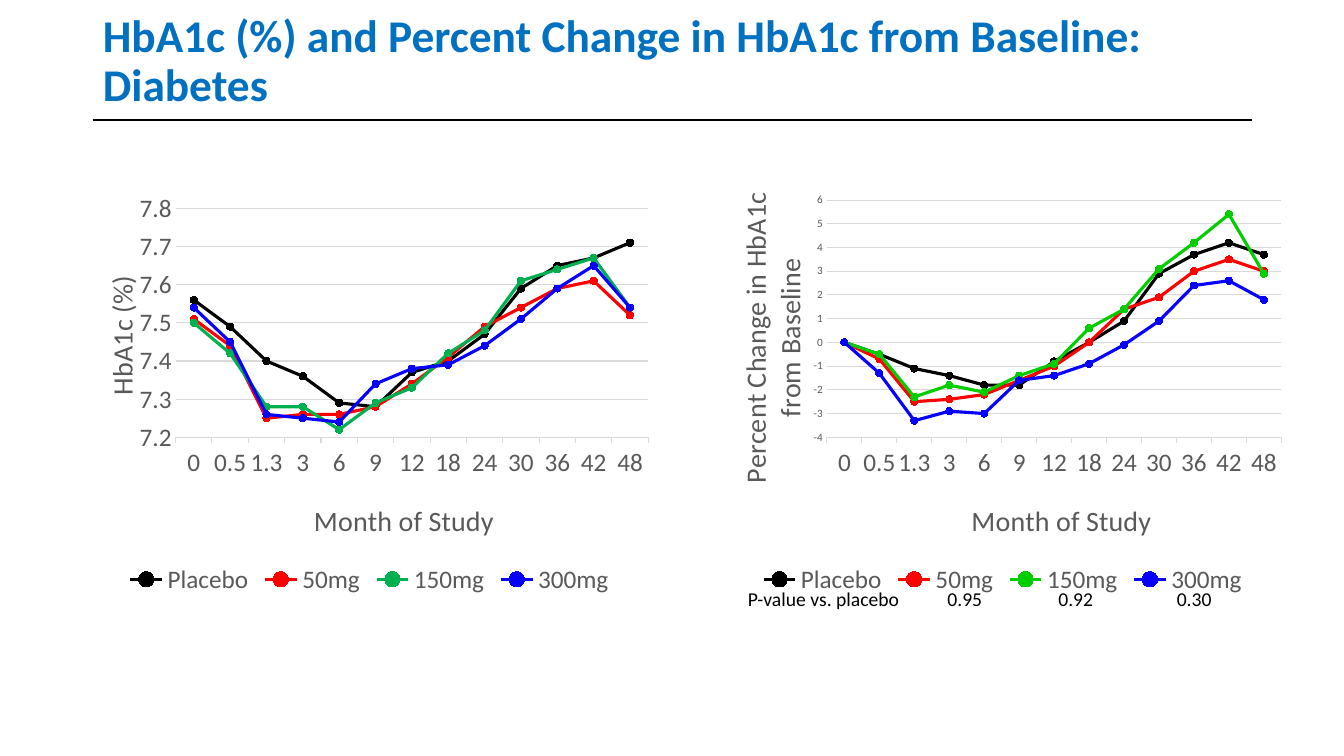
from pptx import Presentation
from pptx.chart.data import CategoryChartData
from pptx.dml.color import RGBColor
from pptx.enum.chart import (XL_AXIS_CROSSES, XL_CHART_TYPE, XL_LEGEND_POSITION,
                             XL_MARKER_STYLE, XL_TICK_LABEL_POSITION, XL_TICK_MARK)
from pptx.enum.shapes import MSO_CONNECTOR
from pptx.enum.text import MSO_ANCHOR, PP_ALIGN
from pptx.oxml import parse_xml
from pptx.oxml.ns import nsdecls, qn
from pptx.util import Inches, Pt

# Content
TITLE = "HbA1c (%) and Percent Change in HbA1c from Baseline: Diabetes"
FONT, GREY, GRID = "Calibri", "595959", "D9D9D9"
MONTHS = ["0", "0.5", "1.3", "3", "6", "9", "12", "18", "24", "30", "36", "42", "48"]
DOSES = ["Placebo", "50mg", "150mg", "300mg"]
CHARTS = [
    dict(left=0.66, label="HbA1c (%)", number_format="#,##0.0", tick_size=18,
         scale=(7.2, 7.8, 0.1), colors=["000000", "FF0000", "00B050", "0700FF"],
         plot=(0.18, 0.06, 0.78, 0.55), month_at=(0.4, 0.75), label_at=(0.05, 0.21),
         values=[
             [7.56, 7.49, 7.4, 7.36, 7.29, 7.28, 7.37, 7.4, 7.47, 7.59, 7.65, 7.67, 7.71],
             [7.51, 7.44, 7.25, 7.26, 7.26, 7.28, 7.34, 7.41, 7.49, 7.54, 7.59, 7.61, 7.52],
             [7.5, 7.42, 7.28, 7.28, 7.22, 7.29, 7.33, 7.42, 7.48, 7.61, 7.64, 7.67, 7.54],
             [7.54, 7.45, 7.26, 7.25, 7.24, 7.34, 7.38, 7.39, 7.44, 7.51, 7.59, 7.65, 7.54]]),
    dict(left=6.94, label="Percent Change in HbA1c from Baseline", number_format="#,##0",
         tick_size=8, scale=(-4, 6, 1), colors=["000000", "FF0100", "02CD00", "0700FF"],
         plot=(0.21, 0.04, 0.75, 0.57), month_at=(0.44, 0.75), label_at=(0.05, 0.01),
         values=[
             [0, -0.5, -1.1, -1.4, -1.8, -1.8, -0.8, 0, 0.9, 2.9, 3.7, 4.2, 3.7],
             [0, -0.7, -2.5, -2.4, -2.2, -1.6, -1, 0, 1.4, 1.9, 3, 3.5, 3],
             [0, -0.5, -2.3, -1.8, -2.1, -1.4, -0.9, 0.6, 1.4, 3.1, 4.2, 5.4, 2.9],
             [0, -1.3, -3.3, -2.9, -3, -1.6, -1.4, -0.9, -0.1, 0.9, 2.4, 2.6, 1.8]]),
]
P_VALUES = ["", "P-value vs. placebo", "0.95", "0.92", "0.30", ""]
P_WIDTHS = [1.37, 2.24, 1.1, 1.1, 1.25, 1.83]
NO_GRID_STYLE = "{2D5ABB26-0587-4C30-8999-92F81FD0307C}"


def color(hex_string):
    return RGBColor.from_string(hex_string)


def format_font(font, size, hex_string, bold=False):
    font.name, font.size, font.bold = FONT, Pt(size), bold
    font.color.rgb = color(hex_string)


def write(frame, text, size=14, hex_string="000000", bold=False, align=None, spacing=None):
    para = frame.paragraphs[0]
    para.alignment, para.line_spacing = align, spacing
    span = para.add_run()
    span.text = text
    format_font(span.font, size, hex_string, bold)


def format_line(line, hex_string, width):
    line.color.rgb = color(hex_string)
    line.width = Pt(width)


def set_layout(parent, index, place, inner=False):
    """Place a chart part by fractions of the chart: x, y and, if given, w, h."""
    for old in parent.findall(qn("c:layout")):
        parent.remove(old)
    target = '<c:layoutTarget val="inner"/>' if inner else ""
    modes = '<c:xMode val="edge"/><c:yMode val="edge"/>'
    sizes = "".join(f'<c:{key} val="{value}"/>' for key, value in zip("xywh", place))
    parent.insert(index, parse_xml(
        f'<c:layout {nsdecls("c")}><c:manualLayout>{target}{modes}{sizes}'
        '</c:manualLayout></c:layout>'))


def format_axis(axis, title, place, tick_size, rotation=0):
    format_font(axis.tick_labels.font, tick_size, GREY)
    frame = axis.axis_title.text_frame
    write(frame, title, size=20, hex_string=GREY)
    frame._txBody.bodyPr.set("rot", str(rotation * 60000))
    set_layout(axis.axis_title._element, 1, place)
    axis.minor_tick_mark = XL_TICK_MARK.NONE


def add_line_chart(page, item):
    data = CategoryChartData()
    data.categories = MONTHS
    for dose, values in zip(DOSES, item["values"]):
        data.add_series(dose, values)
    chart = page.shapes.add_chart(
        XL_CHART_TYPE.LINE_MARKERS, Inches(item["left"]), Inches(1.82),
        Inches(6.01), Inches(4.13), data).chart
    chart.has_title = False
    format_font(chart.font, 10, "000000")

    # Axes
    months, levels = chart.category_axis, chart.value_axis
    format_axis(months, "Month of Study", item["month_at"], 18)
    months.major_tick_mark = XL_TICK_MARK.OUTSIDE
    months.tick_label_position = XL_TICK_LABEL_POSITION.LOW
    format_line(months.format.line, GRID, 0.75)
    format_axis(levels, item["label"], item["label_at"], item["tick_size"], rotation=-90)
    levels.major_tick_mark = XL_TICK_MARK.NONE
    levels.minimum_scale, levels.maximum_scale, levels.major_unit = item["scale"]
    levels.crosses = XL_AXIS_CROSSES.MINIMUM
    levels.tick_labels.number_format = item["number_format"]
    levels.tick_labels.number_format_is_linked = False
    levels.format.line.fill.background()
    levels.has_major_gridlines = True
    format_line(levels.major_gridlines.format.line, GRID, 0.75)

    # Legend and plot area
    chart.has_legend = True
    chart.legend.position = XL_LEGEND_POSITION.BOTTOM
    chart.legend.include_in_layout = False
    format_font(chart.legend.font, 18, GREY)
    set_layout(chart._chartSpace.chart.plotArea, 0, item["plot"], inner=True)

    # Series
    chart.plots[0].vary_by_categories = False
    for series, shade in zip(chart.plots[0].series, item["colors"]):
        series.smooth = False
        format_line(series.format.line, shade, 2.25)
        series.marker.style = XL_MARKER_STYLE.CIRCLE
        series.marker.size = 5
        series.marker.format.fill.solid()
        series.marker.format.fill.fore_color.rgb = color(shade)
        format_line(series.marker.format.line, shade, 0.75)


def add_p_values(page):
    table = page.shapes.add_table(1, len(P_VALUES), Inches(5.41), Inches(5.75),
                                  Inches(sum(P_WIDTHS)), Inches(0.41)).table
    table.first_row = table.horz_banding = False
    table._tbl.tblPr.find(qn("a:tableStyleId")).text = NO_GRID_STYLE
    for column, (text, width) in enumerate(zip(P_VALUES, P_WIDTHS)):
        table.columns[column].width = Inches(width)
        cell = table.cell(0, column)
        cell.fill.background()
        cell.vertical_anchor = MSO_ANCHOR.MIDDLE
        if text:
            write(cell.text_frame, text,
                  align=PP_ALIGN.RIGHT if column == 1 else PP_ALIGN.CENTER)


def main():
    deck = Presentation()
    deck.slide_width, deck.slide_height = Inches(13.33), Inches(7.5)
    page = deck.slides.add_slide(deck.slide_layouts[5])

    # Title and rule
    title = page.shapes.title
    title.left, title.top = Inches(0.92), Inches(0.14)
    title.width, title.height = Inches(11.5), Inches(0.95)
    title.text_frame.vertical_anchor = MSO_ANCHOR.MIDDLE
    title.text_frame.word_wrap = True
    write(title.text_frame, TITLE, size=32.4, hex_string="0070C0", bold=True,
          align=PP_ALIGN.LEFT, spacing=0.9)
    rule = page.shapes.add_connector(MSO_CONNECTOR.STRAIGHT, Inches(0.92), Inches(1.19),
                                     Inches(12.42), Inches(1.19))
    format_line(rule.line, "000000", 1.5)
    rule._element.spPr.append(parse_xml(f'<a:effectLst {nsdecls("a")}/>'))

    # Charts and p-values
    for item in CHARTS:
        add_line_chart(page, item)
    add_p_values(page)
    deck.save("out.pptx")


if __name__ == "__main__":
    main()
